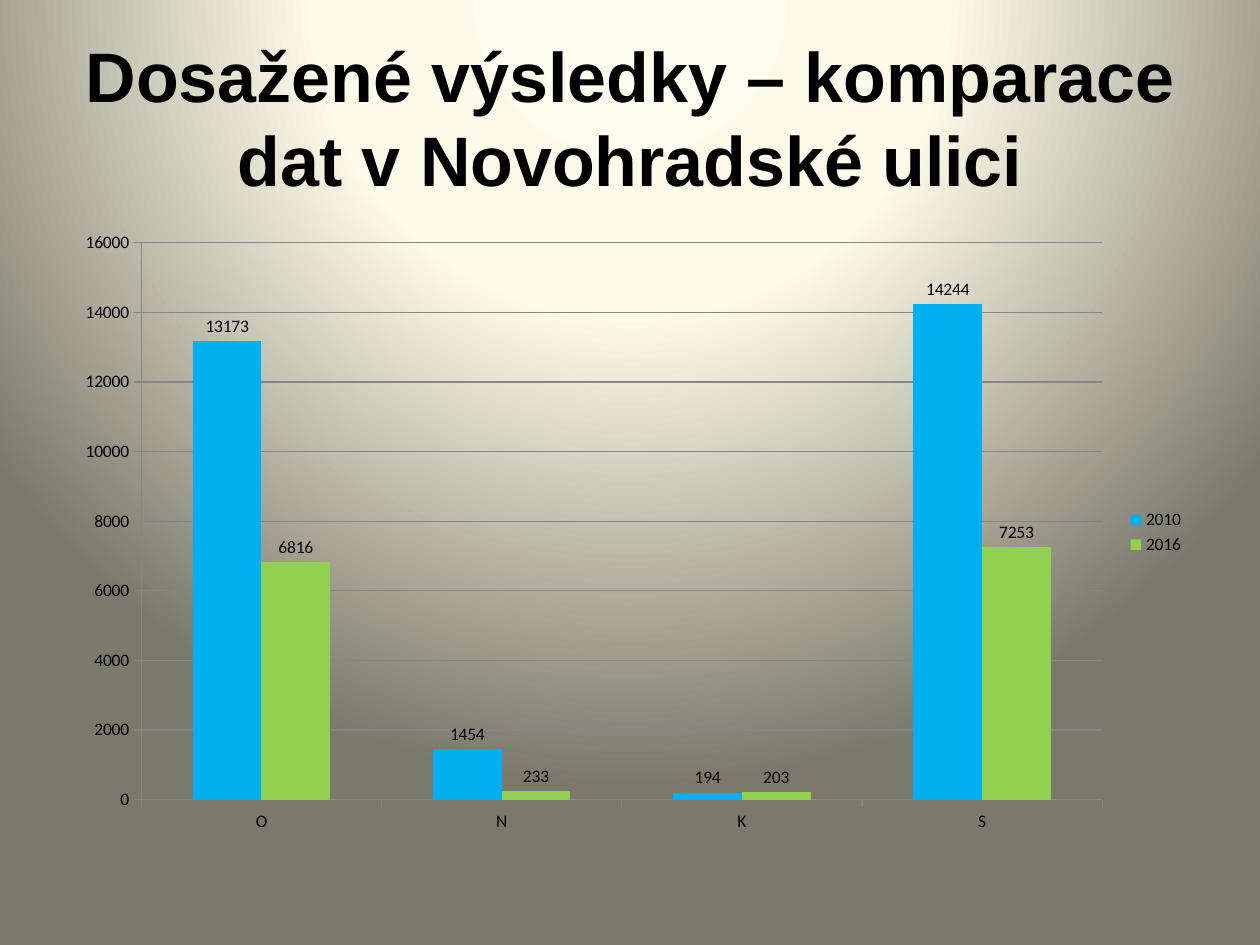
from lxml.etree import SubElement
from pptx import Presentation
from pptx.chart.data import CategoryChartData
from pptx.dml.color import RGBColor
from pptx.enum.chart import (XL_CHART_TYPE, XL_LABEL_POSITION,
                             XL_LEGEND_POSITION, XL_TICK_MARK)
from pptx.enum.text import MSO_ANCHOR, PP_ALIGN
from pptx.oxml.ns import qn
from pptx.util import Inches, Pt

BLACK = RGBColor(0x00, 0x00, 0x00)
GRID = RGBColor(0x86, 0x86, 0x86)
BLUE = RGBColor(0x00, 0xB0, 0xF0)
GREEN = RGBColor(0x92, 0xD0, 0x50)
BACKGROUND_STOPS = [
    (0, RGBColor(0xFE, 0xFC, 0xEE)),
    (40, RGBColor(0xFD, 0xFA, 0xEA)),
    (100, RGBColor(0x7B, 0x79, 0x6B)),
]

CATEGORIES = ["O", "N", "K", "S"]
SERIES = [
    ("2010", [13173, 1454, 194, 14244], BLUE),
    ("2016", [6816, 233, 203, 7253], GREEN),
]


def set_background(slide, stops):
    """Fill the background with a circular gradient centred above the slide."""
    slide.background.fill.gradient()
    grad = slide.element.find(".//" + qn("a:gradFill"))
    for child in list(grad):
        grad.remove(child)
    gs_list = SubElement(grad, qn("a:gsLst"))
    for percent, color in stops:
        gs = SubElement(gs_list, qn("a:gs"), pos=str(percent * 1000))
        SubElement(gs, qn("a:srgbClr"), val=str(color))
    circle = SubElement(grad, qn("a:path"), path="circle")
    SubElement(circle, qn("a:fillToRect"),
               l="50000", t="-80000", r="50000", b="180000")


def format_font(font, name="Calibri", size=10, color=BLACK, bold=False):
    font.name = name
    font.size = Pt(size)
    font.color.rgb = color
    font.bold = bold


def write_text(shape, text, align=PP_ALIGN.CENTER, anchor=MSO_ANCHOR.MIDDLE,
               **font_format):
    tf = shape.text_frame
    tf.word_wrap = True
    tf.vertical_anchor = anchor
    p = tf.paragraphs[0]
    p.alignment = align
    r = p.add_run()
    r.text = text
    format_font(r.font, **font_format)


def add_title(slide, text):
    title = slide.shapes.title
    title.left, title.top = Inches(0.5), Inches(0.3)
    title.width, title.height = Inches(9), Inches(1.25)
    write_text(title, text, name="Arial", size=40, bold=True)


def format_axis(axis):
    axis.major_tick_mark = XL_TICK_MARK.OUTSIDE
    axis.minor_tick_mark = XL_TICK_MARK.NONE
    axis.format.line.color.rgb = GRID


def add_column_chart(slide):
    data = CategoryChartData()
    data.categories = CATEGORIES
    for name, values, _ in SERIES:
        data.add_series(name, values)
    chart = slide.shapes.add_chart(
        XL_CHART_TYPE.COLUMN_CLUSTERED, Inches(0.5), Inches(1.75),
        Inches(9), Inches(4.95), data).chart
    format_font(chart.font)
    chart.has_title = False
    chart.has_legend = True
    chart.legend.position = XL_LEGEND_POSITION.RIGHT
    chart.legend.include_in_layout = False

    format_axis(chart.category_axis)
    value_axis = chart.value_axis
    format_axis(value_axis)
    value_axis.minimum_scale, value_axis.maximum_scale = 0, 16000
    value_axis.major_unit = 2000
    value_axis.has_major_gridlines = True
    value_axis.major_gridlines.format.line.color.rgb = GRID

    plot = chart.plots[0]
    plot.gap_width = 150
    plot.overlap = 0
    plot.vary_by_categories = False
    for series, (_, _, color) in zip(plot.series, SERIES):
        series.format.fill.solid()
        series.format.fill.fore_color.rgb = color
        series.data_labels.show_value = True
        series.data_labels.position = XL_LABEL_POSITION.OUTSIDE_END


def main():
    prs = Presentation()
    prs.slide_width, prs.slide_height = Inches(10), Inches(7.5)
    s = prs.slides.add_slide(prs.slide_layouts[5])
    set_background(s, BACKGROUND_STOPS)
    add_title(s, "Dosažené výsledky – komparace dat v Novohradské ulici")
    add_column_chart(s)
    prs.save("out.pptx")


if __name__ == "__main__":
    main()
